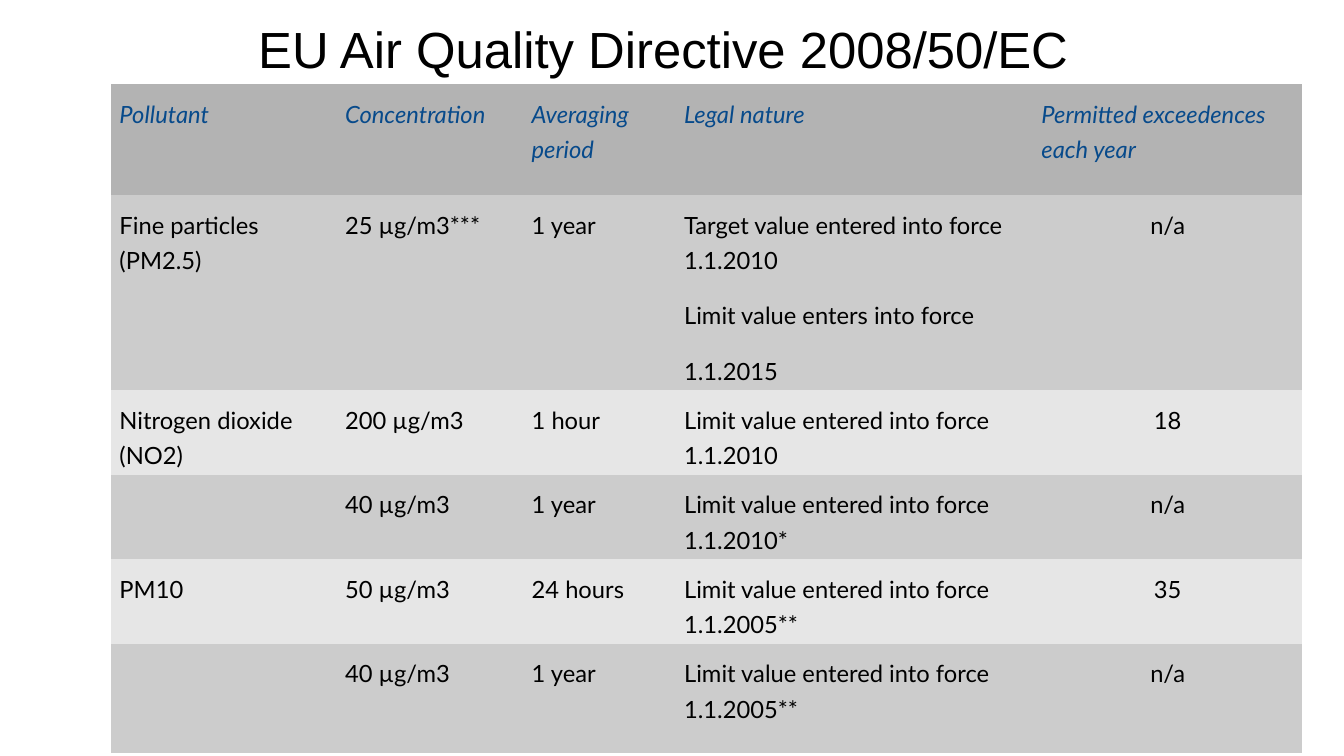
from pptx import Presentation
from pptx.dml.color import RGBColor
from pptx.enum.text import MSO_ANCHOR, PP_ALIGN
from pptx.oxml.ns import qn
from pptx.util import Inches, Pt

BLACK = RGBColor(0x00, 0x00, 0x00)
HEADER_BLUE = RGBColor(0x07, 0x4A, 0x8B)
HEADER_GREY = RGBColor(0xB3, 0xB3, 0xB3)
DARK_GREY = RGBColor(0xCC, 0xCC, 0xCC)
LIGHT_GREY = RGBColor(0xE6, 0xE6, 0xE6)

PLAIN_STYLE = "{2D5ABB26-0587-4C30-8999-92F81FD0307C}"
COLUMN_WIDTHS = [1.85, 1.53, 1.25, 2.93, 2.21]
ROW_HEIGHTS = [0.91, 1.58, 0.68, 0.68, 0.68, 0.9]
FIRST_LINE_SPACING = 1.25
LATER_LINE_SPACING = 1.94

LIMITS = [
    ["Pollutant", "Concentration", "Averaging period", "Legal nature",
     "Permitted exceedences each year"],
    ["Fine particles (PM2.5)", "25 µg/m3***", "1 year",
     "Target value entered into force 1.1.2010\nLimit value enters into force 1.1.2015", "n/a"],
    ["Nitrogen dioxide (NO2)", "200 µg/m3", "1 hour",
     "Limit value entered into force 1.1.2010", "18"],
    ["", "40 µg/m3", "1 year", "Limit value entered into force 1.1.2010*", "n/a"],
    ["PM10", "50 µg/m3", "24 hours", "Limit value entered into force 1.1.2005**", "35"],
    ["", "40 µg/m3", "1 year", "Limit value entered into force 1.1.2005**", "n/a"],
]


def set_title(slide, text):
    """Place and format the slide title."""
    title = slide.shapes.title
    title.left, title.top = Inches(1.32), Inches(0.14)
    title.width, title.height = Inches(8.24), Inches(0.57)
    title.text_frame.text = text
    title.text_frame.vertical_anchor = MSO_ANCHOR.MIDDLE
    para = title.text_frame.paragraphs[0]
    para.alignment = PP_ALIGN.CENTER
    para.line_spacing = 0.93
    para.font.name, para.font.size = "Arial", Pt(30)
    para.font.color.rgb = BLACK


def fill_cell(cell, text, background, is_header, alignment):
    """Write one table cell with its fill, margins and font."""
    cell.fill.solid()
    cell.fill.fore_color.rgb = background
    cell.margin_left = cell.margin_right = cell.margin_top = Inches(0.07)
    cell.margin_bottom = Inches(0.04)
    cell.text = text
    for index, para in enumerate(cell.text_frame.paragraphs):
        para.alignment = alignment
        para.line_spacing = LATER_LINE_SPACING if index else FIRST_LINE_SPACING
        para.font.name, para.font.size = "Lato", Pt(14)
        para.font.italic = is_header
        para.font.color.rgb = HEADER_BLUE if is_header else BLACK


def add_limits_table(slide):
    """Add the table of pollutant limits with alternating row fills."""
    frame = slide.shapes.add_table(
        len(ROW_HEIGHTS), len(COLUMN_WIDTHS), Inches(0.91), Inches(0.69),
        Inches(sum(COLUMN_WIDTHS)), Inches(sum(ROW_HEIGHTS)))
    for style in frame.element.iter(qn("a:tableStyleId")):
        style.text = PLAIN_STYLE
    table = frame.table
    table.first_row = table.horz_banding = False
    for column, width in zip(table.columns, COLUMN_WIDTHS):
        column.width = Inches(width)
    last_column = len(COLUMN_WIDTHS) - 1
    for row_index, texts in enumerate(LIMITS):
        table.rows[row_index].height = Inches(ROW_HEIGHTS[row_index])
        is_header = row_index == 0
        band = DARK_GREY if row_index % 2 else LIGHT_GREY
        if row_index == 3 or row_index == 5:
            band = DARK_GREY
        background = HEADER_GREY if is_header else band
        for column_index, text in enumerate(texts):
            centred = column_index == last_column and not is_header
            alignment = PP_ALIGN.CENTER if centred else PP_ALIGN.LEFT
            fill_cell(table.cell(row_index, column_index), text, background, is_header, alignment)


def main():
    """Build the air quality slide and save it."""
    deck = Presentation()
    deck.slide_width, deck.slide_height = Inches(11.02), Inches(6.2)
    slide = deck.slides.add_slide(deck.slide_layouts[5])
    add_limits_table(slide)
    set_title(slide, "EU Air Quality Directive 2008/50/EC")
    deck.save("out.pptx")


if __name__ == "__main__":
    main()
